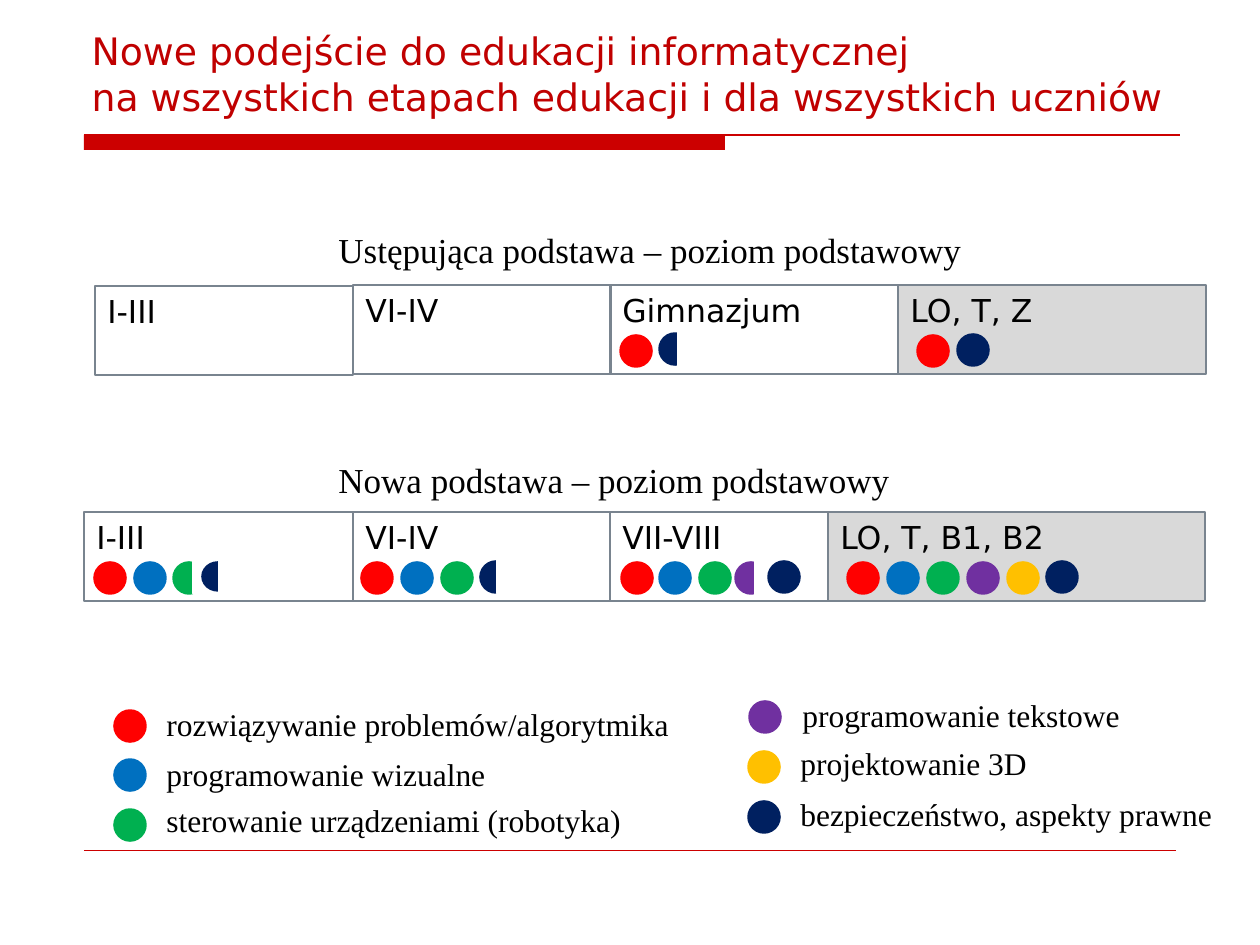
from lxml import etree
from pptx import Presentation
from pptx.dml.color import RGBColor
from pptx.enum.shapes import MSO_CONNECTOR, MSO_SHAPE
from pptx.enum.text import MSO_ANCHOR, MSO_AUTO_SIZE, PP_ALIGN
from pptx.oxml.ns import qn
from pptx.util import Emu, Pt

RECT, OVAL = MSO_SHAPE.RECTANGLE, MSO_SHAPE.OVAL
STRAIGHT = MSO_CONNECTOR.STRAIGHT
TOP, BOTTOM = MSO_ANCHOR.TOP, MSO_ANCHOR.BOTTOM
LEFT = PP_ALIGN.LEFT
NO_FIT = MSO_AUTO_SIZE.NONE

BLACK = RGBColor(0x00, 0x00, 0x00)
WHITE = RGBColor(0xFF, 0xFF, 0xFF)
GREY = RGBColor(0xD9, 0xD9, 0xD9)
BORDER = RGBColor(0x79, 0x84, 0x8F)
TITLE_RED = RGBColor(0xC0, 0x00, 0x00)
RULE_RED = RGBColor(0xCC, 0x00, 0x00)
RED = RGBColor(0xFF, 0x00, 0x00)
BLUE = RGBColor(0x00, 0x70, 0xC0)
GREEN = RGBColor(0x00, 0xB0, 0x50)
PURPLE = RGBColor(0x70, 0x30, 0xA0)
YELLOW = RGBColor(0xFF, 0xC0, 0x00)
NAVY = RGBColor(0x00, 0x20, 0x60)

SANS, SERIF = "DejaVu Sans", "Times New Roman"
DOT = 30


def px(n):
    return Emu(round(n * 914400 / 126))


def write(tf, text, font=SERIF, size=18, color=BLACK, anchor=TOP, wrap=True):
    tf.word_wrap = wrap
    tf.auto_size = NO_FIT
    tf.vertical_anchor = anchor
    p = tf.paragraphs[0]
    p.alignment = LEFT
    p.text = text
    for r in p.runs:
        r.font.name = font
        r.font.size = Pt(size)
        r.font.color.rgb = color


class Page:
    """Holds the current slide and draws its elements in px."""

    def __init__(self, prs):
        self.slide = prs.slides.add_slide(prs.slide_layouts[5])
        self.shapes = self.slide.shapes

    def title(self, text, x, y, w, h):
        s = self.shapes.title
        s.left, s.top, s.width, s.height = map(px, (x, y, w, h))
        write(s.text_frame, text, SANS, 21.6, TITLE_RED, BOTTOM)

    def shape(self, kind, x, y, w, h, fill=None, line=None, weight=2.0):
        s = self.shapes.add_shape(kind, *map(px, (x, y, w, h)))
        s.shadow.inherit = False
        if fill is None:
            s.fill.background()
        else:
            s.fill.solid()
            s.fill.fore_color.rgb = fill
        if line is None:
            s.line.fill.background()
        else:
            s.line.color.rgb = line
            s.line.width = Pt(weight)
        return s

    def stage(self, text, x, y, w, fill=None):
        s = self.shape(RECT, x, y, w, 89, fill, BORDER, 0.75)
        write(s.text_frame, text, SANS)

    def dot(self, color, x, y, h=DOT):
        self.shape(OVAL, x, y, DOT, h, color, color)

    def half_dot(self, color, x, y, cut, cover_y, cover_h, h=DOT):
        """Draw a dot and hide what lies to the right of cut."""
        self.dot(color, x, y, h)
        self.shape(RECT, cut, cover_y, 28, cover_h, WHITE, WHITE)

    def label(self, text, x, y, w, h=50, size=18, wrap=False):
        s = self.shapes.add_textbox(*map(px, (x, y, w, h)))
        write(s.text_frame, text, size=size, wrap=wrap)

    def rule(self, x1, x2, y, weight):
        s = self.shapes.add_connector(STRAIGHT, px(x1), px(y), px(x2), px(y))
        s.line.color.rgb = RULE_RED
        s.line.width = Pt(weight)
        etree.SubElement(s._element.spPr, qn("a:effectLst"))


def draw_old_curriculum(page):
    page.label("Ustępująca podstawa – poziom podstawowy", 326, 222, 655, 55, 20, True)
    page.stage("VI-IV", 353, 285, 258)
    page.stage("Gimnazjum", 610, 285, 288)
    page.stage("LO, T, Z", 898, 285, 308, GREY)
    page.stage("I-III", 95, 286, 258)
    page.dot(RED, 621, 336)
    page.half_dot(NAVY, 660, 334, 679, 330, 40)
    page.dot(RED, 918, 336)
    page.dot(NAVY, 958, 335)


def draw_new_curriculum(page):
    page.label("Nowa podstawa – poziom podstawowy", 326, 452, 655, 55, 20, True)
    stages = ["I-III", "VI-IV", "VII-VIII", "LO, T, B1, B2"]
    edges = [84, 353, 610, 828, 1205]
    for text, x, end in zip(stages, edges, edges[1:]):
        page.stage(text, x, 512, end - x, GREY if end == edges[-1] else None)

    y = 563
    for first, count in ((95, 2), (362, 3), (848, 5)):
        for i, color in enumerate((RED, BLUE, GREEN, PURPLE, YELLOW)[:count]):
            page.dot(color, first + 40 * i, y)
    page.half_dot(GREEN, 174, y, 194, 522, 71)
    page.half_dot(NAVY, 203, y, 220, 522, 71, h=27)
    page.half_dot(NAVY, 481, y - 1, 498, 522, 71)
    for color, x in ((RED, 622), (BLUE, 660), (GREEN, 700)):
        page.dot(color, x, y)
    page.half_dot(PURPLE, 736, y, 756, 526, 71)
    page.dot(NAVY, 769, y - 1)
    page.dot(NAVY, 1047, y - 1)


def draw_legend(page):
    entries = [
        (RED, "rozwiązywanie problemów/algorytmika", 115, 711, 154, 699, 529),
        (BLUE, "programowanie wizualne", 115, 760, 154, 749, 347),
        (GREEN, "sterowanie urządzeniami (robotyka)", 115, 810, 154, 795, 490),
        (PURPLE, "programowanie tekstowe", 750, 702, 790, 690, 354),
        (YELLOW, "projektowanie 3D", 749, 752, 788, 738, 260),
        (NAVY, "bezpieczeństwo, aspekty prawne", 749, 802, 788, 789, 441),
    ]
    for color, text, dot_x, dot_y, x, y, w in entries:
        page.dot(color, dot_x, dot_y)
        page.label(text, x, y, w)


def main():
    prs = Presentation()
    prs.slide_width, prs.slide_height = px(1260), px(945)
    page = Page(prs)
    page.shape(RECT, 84, 135, 641, 15, RULE_RED)
    page.rule(84, 1180, 135, 0.75)
    page.rule(84, 1176, 850, 0.25)
    page.title("Nowe podejście do edukacji informatycznej\v"
               "na wszystkich etapach edukacji i dla wszystkich uczniów",
               79, 42, 1150, 83)
    draw_old_curriculum(page)
    draw_new_curriculum(page)
    draw_legend(page)
    prs.save("out.pptx")


if __name__ == "__main__":
    main()
